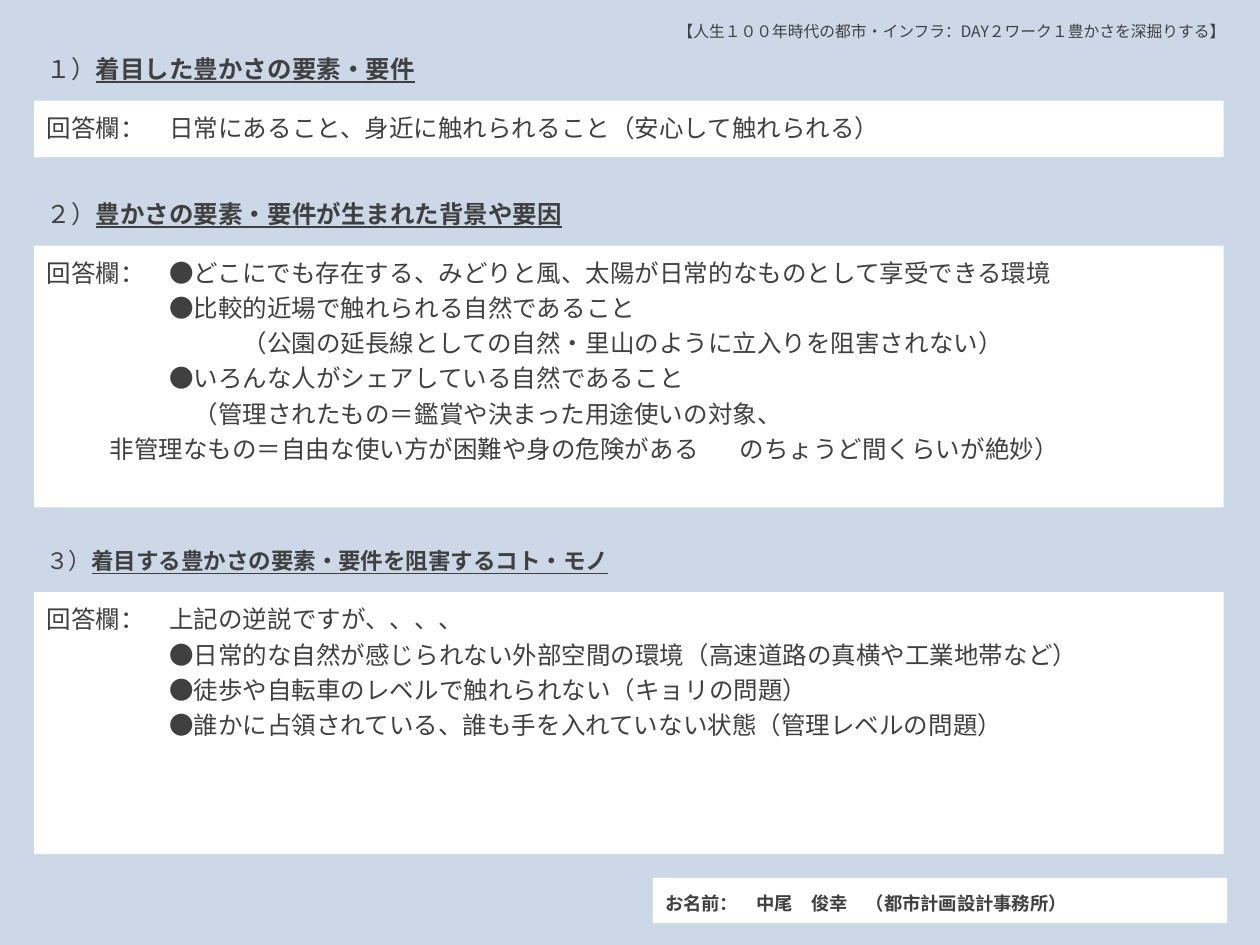
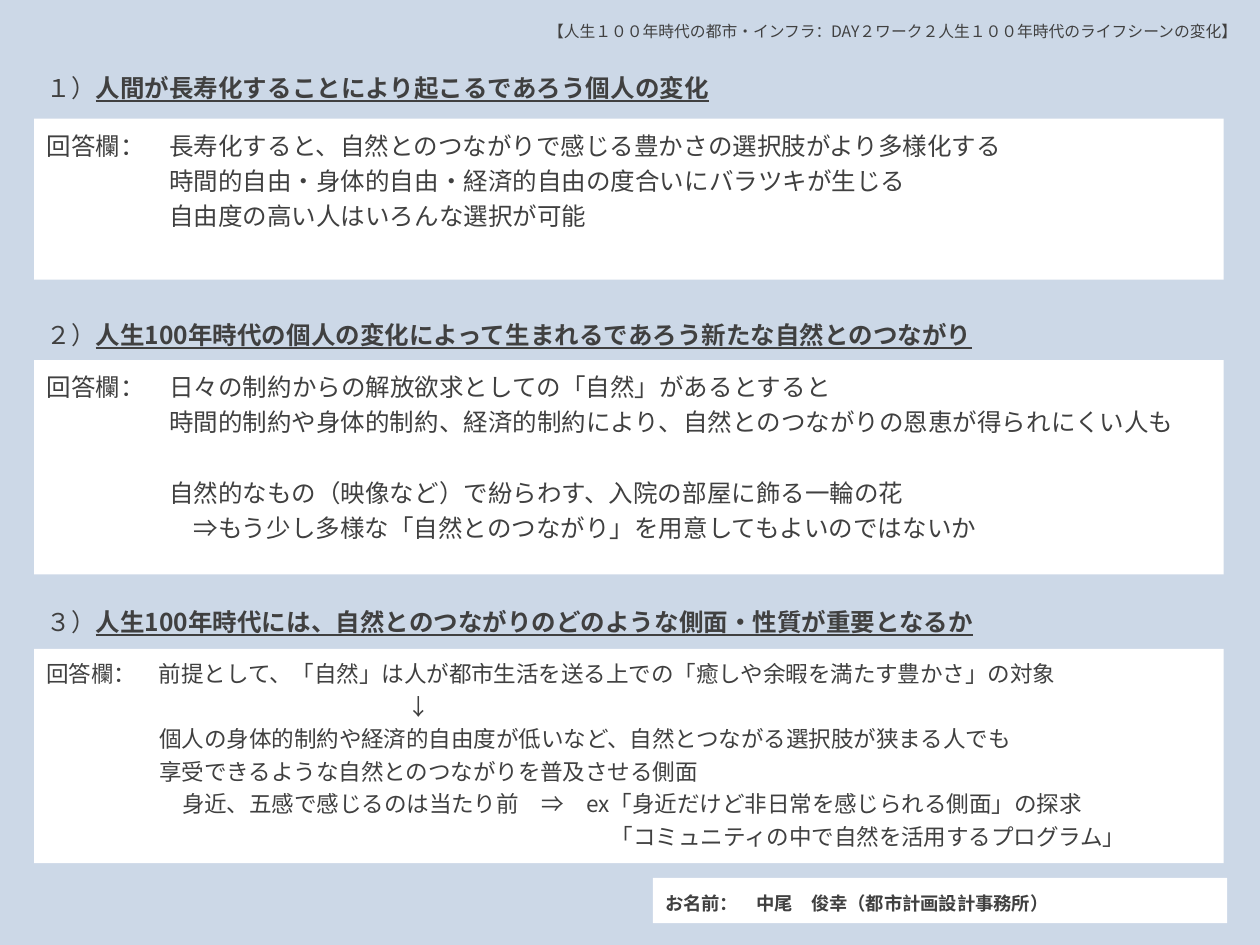
"""Build two worksheet slides on richness and nature in the 100-year life."""
from dataclasses import dataclass
from typing import Sequence

import pptx
import pptx.dml.color
import pptx.enum.shapes
import pptx.enum.text
import pptx.util
from lxml import etree
from pptx.oxml.ns import qn

Cm, Pt = pptx.util.Cm, pptx.util.Pt
BACKGROUND, PANEL, INK = "CCD8E7", "FFFFFF", "404040"
FONT = "Noto Sans CJK JP"
LEFT, ANSWER_WIDTH, HEADING_HEIGHT = 0.69, 23.98, 1.14
LINE_SPACING = 1.2
SMALLER = 12.9


@dataclass(frozen=True)
class Box:
    left: float
    top: float
    width: float
    height: float


@dataclass(frozen=True)
class Span:
    text: str
    size: float = 14
    bold: bool = False
    underline: bool = False


@dataclass(frozen=True)
class Line:
    """Text whose indent and tab stops count full-width characters."""
    text: str
    indent: int = 5
    stops: Sequence[int] = ()
    space_before: float = 0


@dataclass(frozen=True)
class Question:
    number: str
    title: str
    heading_top: float
    heading_width: float
    answer_top: float
    answer_height: float
    answer: Sequence[Line]
    heading_size: float = 14
    answer_size: float = 14


@dataclass(frozen=True)
class Worksheet:
    header: str
    header_box: Box
    name: str
    questions: Sequence[Question]


NAME_BOX = Box(13.16, 17.7, 11.58, 0.91)

WORKSHEETS = [
    Worksheet(
        "【人生１００年時代の都市・インフラ：DAY２ワーク１豊かさを深掘りする】",
        Box(13.41, 0.23, 12.27, 0.76),
        "お名前：　中尾　俊幸　（都市計画設計事務所）",
        [
            Question("１）", "着目した豊かさの要素・要件", 0.84, 8.15, 2.03, 1.14, [
                Line("回答欄：　日常にあること、身近に触れられること（安心して触れられる）", 0),
            ]),
            Question("２）", "豊かさの要素・要件が生まれた背景や要因", 3.76, 12.12, 4.95, 5.28, [
                Line("回答欄：　●どこにでも存在する、みどりと風、太陽が日常的なものとして享受できる環境", 0),
                Line("●比較的近場で触れられる自然であること"),
                Line("（公園の延長線としての自然・里山のように立入りを阻害されない）", 8),
                Line("●いろんな人がシェアしている自然であること"),
                Line("（管理されたもの＝鑑賞や決まった用途使いの対象、", 6),
                Line("\t非管理なもの＝自由な使い方が困難や身の危険がある\tのちょうど間くらいが絶妙）",
                     0, (7, 34)),
            ]),
            Question("３）", "着目する豊かさの要素・要件を阻害するコト・モノ", 10.8, 12.29, 11.94, 5.28, [
                Line("回答欄：　上記の逆説ですが、、、、", 0),
                Line("●日常的な自然が感じられない外部空間の環境（高速道路の真横や工業地帯など）"),
                Line("●徒歩や自転車のレベルで触れられない（キョリの問題）"),
                Line("●誰かに占領されている、誰も手を入れていない状態（管理レベルの問題）"),
            ], heading_size=SMALLER),
        ]),
    Worksheet(
        "【人生１００年時代の都市・インフラ：DAY２ワーク２人生１００年時代のライフシーンの変化】",
        Box(10.8, 0.23, 14.6, 0.91),
        "お名前：　中尾　俊幸（都市計画設計事務所）",
        [
            Question("１）", "人間が長寿化することにより起こるであろう個人の変化",
                     1.22, 14.22, 2.39, 3.25, [
                Line("回答欄：　長寿化すると、自然とのつながりで感じる豊かさの選択肢がより多様化する", 0),
                Line("時間的自由・身体的自由・経済的自由の度合いにバラツキが生じる"),
                Line("自由度の高い人はいろんな選択が可能"),
            ]),
            Question("２）", "人生100年時代の個人の変化によって生まれるであろう新たな自然とのつながり",
                     6.2, 21.29, 7.26, 4.32, [
                Line("回答欄：　日々の制約からの解放欲求としての「自然」があるとすると", 0),
                Line("時間的制約や身体的制約、経済的制約により、自然とのつながりの恩恵が得られにくい人も"),
                Line("自然的なもの（映像など）で紛らわす、入院の部屋に飾る一輪の花", space_before=20.2),
                Line("⇒もう少し多様な「自然とのつながり」を用意してもよいのではないか", 6),
            ]),
            Question("３）", "人生100年時代には、自然とのつながりのどのような側面・性質が重要となるか",
                     11.99, 21.29, 13.08, 4.32, [
                Line("回答欄：　前提として、「自然」は人が都市生活を送る上での「癒しや余暇を満たす豊かさ」の対象", 0),
                Line("↓", 16),
                Line("個人の身体的制約や経済的自由度が低いなど、自然とつながる選択肢が狭まる人でも"),
                Line("享受できるような自然とのつながりを普及させる側面"),
                Line("身近、五感で感じるのは当たり前　⇒　ex「身近だけど非日常を感じられる側面」の探求", 6),
                Line("「コミュニティの中で自然を活用するプログラム」", 25),
            ], answer_size=SMALLER),
        ]),
]


def color(value: str) -> pptx.dml.color.RGBColor:
    """Turn a hex string into a colour."""
    return pptx.dml.color.RGBColor.from_string(value)


def apply(target: object, values: dict) -> None:
    """Set each attribute of the target."""
    for key, value in values.items():
        setattr(target, key, value)


def lengths(box: Box) -> list:
    """Give the box as slide lengths."""
    return [Cm(value) for value in (box.left, box.top, box.width, box.height)]


def write(paragraph, spans: Sequence[Span]) -> None:
    """Write the spans into one left-aligned paragraph."""
    apply(paragraph, {"alignment": pptx.enum.text.PP_ALIGN.LEFT, "line_spacing": LINE_SPACING})
    for span in spans:
        run = paragraph.add_run()
        run.text = span.text
        apply(run.font, {"size": Pt(span.size), "bold": span.bold,
                         "underline": span.underline, "name": FONT})
        run.font.color.rgb = color(INK)
        east_asian = etree.SubElement(run.font._element, qn("a:ea"))
        east_asian.set("typeface", FONT)


def indent_line(paragraph, line: Line, size: float) -> None:
    """Apply the indent, tab stops and gap of a line."""
    paragraph.space_before = Pt(line.space_before)
    properties = paragraph._p.get_or_add_pPr()
    properties.set("marL", str(Pt(line.indent * size)))
    properties.set("indent", "0")
    if line.stops:
        stops = etree.SubElement(properties, qn("a:tabLst"))
        for stop in line.stops:
            etree.SubElement(stops, qn("a:tab"), pos=str(Pt(stop * size)), algn="l")


def add_label(slide, box: Box, spans: Sequence[Span]) -> None:
    """Add one line of text straight on the background."""
    frame = slide.shapes.add_textbox(*lengths(box)).text_frame
    frame.word_wrap = True
    write(frame.paragraphs[0], spans)


def add_panel(slide, box: Box, anchor: pptx.enum.text.MSO_ANCHOR):
    """Add a white panel and return its text frame."""
    panel = slide.shapes.add_shape(pptx.enum.shapes.MSO_SHAPE.RECTANGLE, *lengths(box))
    panel.shadow.inherit = False
    panel.fill.solid()
    panel.fill.fore_color.rgb = color(PANEL)
    panel.line.fill.background()
    apply(panel.text_frame, {"word_wrap": True, "vertical_anchor": anchor})
    return panel.text_frame


def add_question(slide, question: Question) -> None:
    """Add a numbered heading and its answer panel."""
    size = question.heading_size
    add_label(slide, Box(LEFT, question.heading_top, question.heading_width, HEADING_HEIGHT),
              [Span(question.number, size), Span(question.title, size, True, True)])
    answer_box = Box(LEFT, question.answer_top, ANSWER_WIDTH, question.answer_height)
    frame = add_panel(slide, answer_box, pptx.enum.text.MSO_ANCHOR.TOP)
    for index, line in enumerate(question.answer):
        paragraph = frame.add_paragraph() if index else frame.paragraphs[0]
        write(paragraph, [Span(line.text, question.answer_size)])
        indent_line(paragraph, line, question.answer_size)


def add_worksheet(deck, worksheet: Worksheet) -> None:
    """Add one worksheet slide."""
    slide = deck.slides.add_slide(deck.slide_layouts[6])
    slide.background.fill.solid()
    slide.background.fill.fore_color.rgb = color(BACKGROUND)
    add_label(slide, worksheet.header_box, [Span(worksheet.header, 9)])
    for question in worksheet.questions:
        add_question(slide, question)
    name_frame = add_panel(slide, NAME_BOX, pptx.enum.text.MSO_ANCHOR.MIDDLE)
    write(name_frame.paragraphs[0], [Span(worksheet.name, 10.5, True)])


def main() -> None:
    """Build and save the deck."""
    deck = pptx.Presentation()
    apply(deck, {"slide_width": Cm(25.4), "slide_height": Cm(19.05)})
    for worksheet in WORKSHEETS:
        add_worksheet(deck, worksheet)
    deck.save("out.pptx")


if __name__ == "__main__":
    main()
